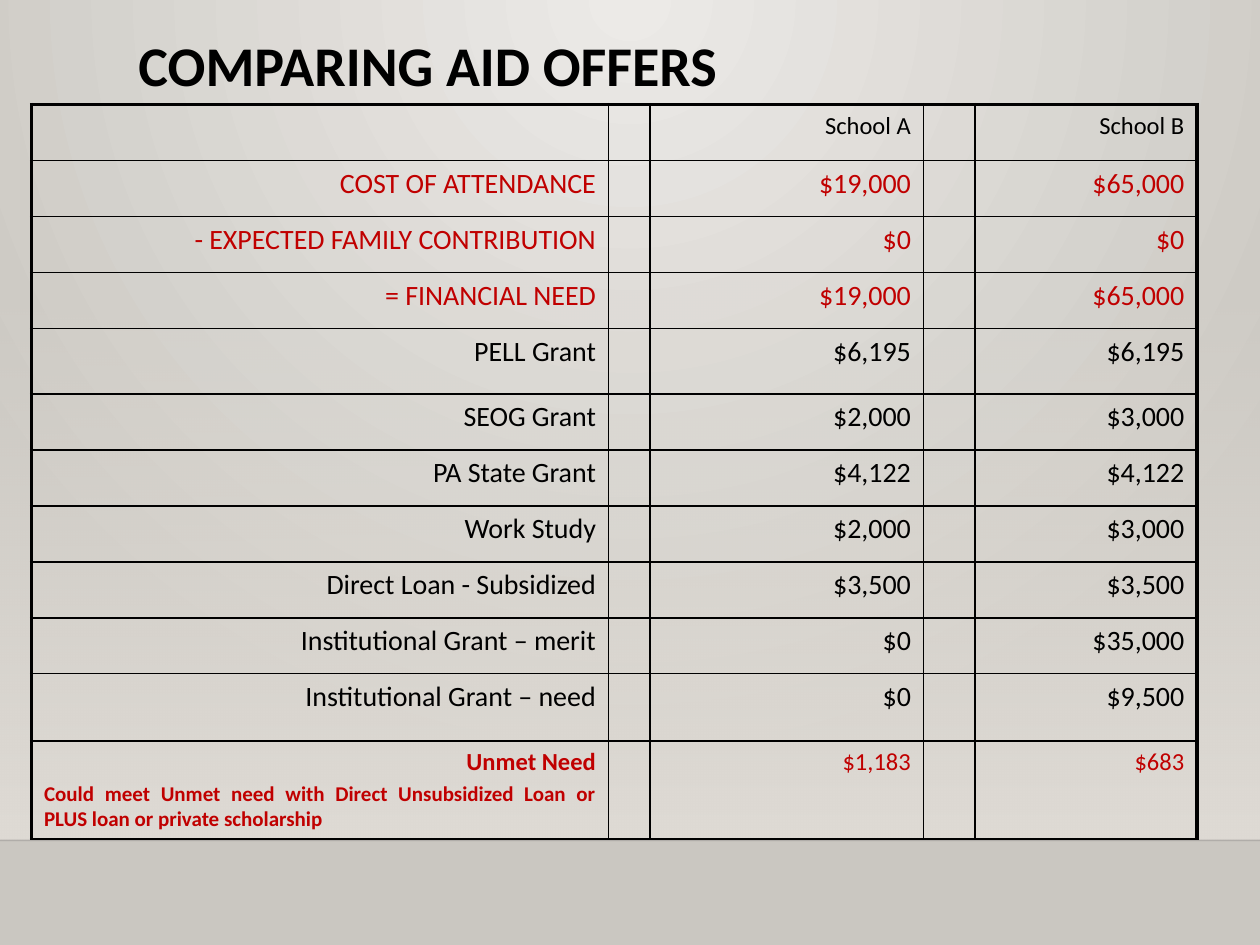
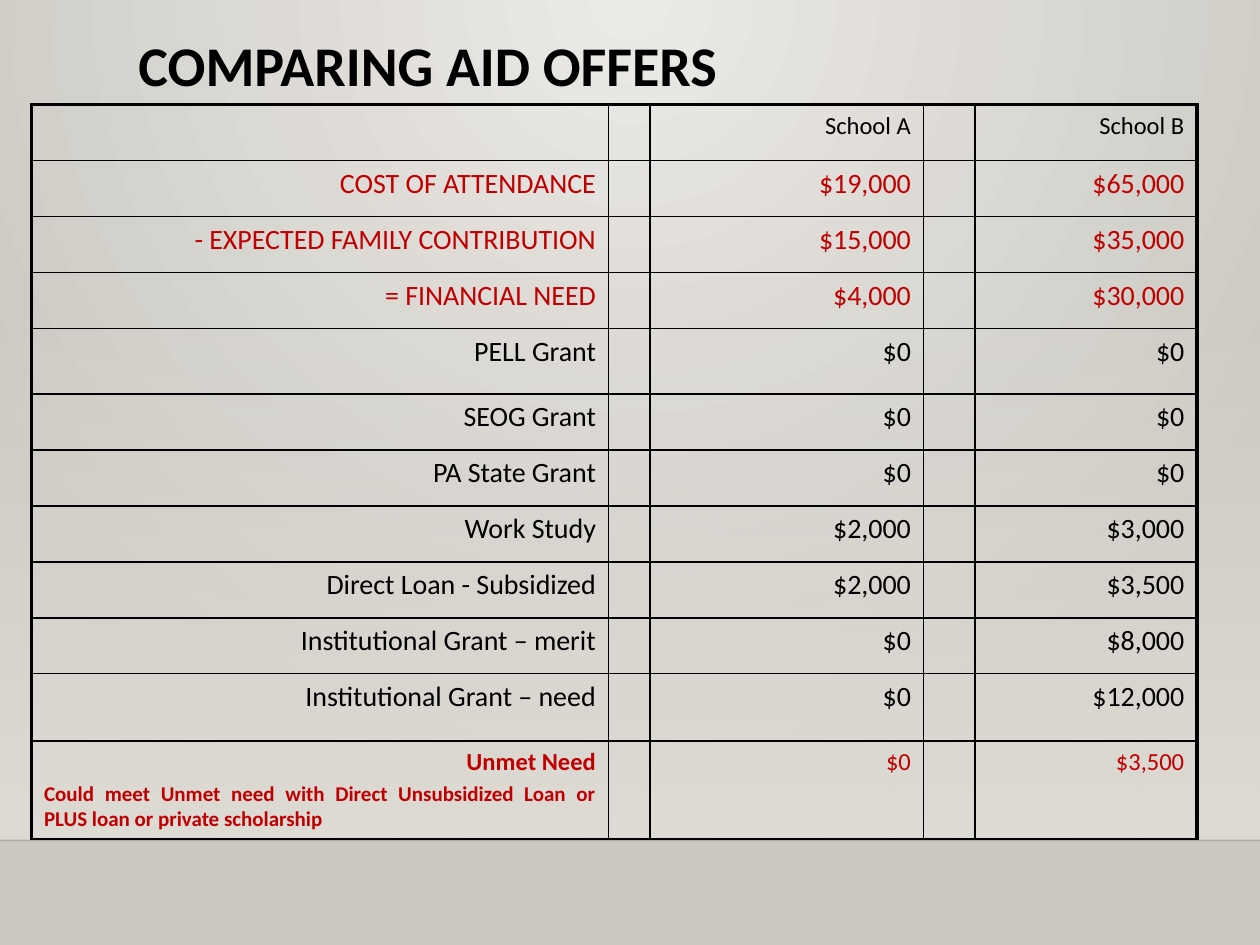
import dataclasses

import lxml.etree
import pptx
import pptx.dml.color
import pptx.enum.shapes
import pptx.enum.text
import pptx.oxml.ns
import pptx.util

ALIGN = pptx.enum.text.PP_ALIGN
qn = pptx.oxml.ns.qn


@dataclasses.dataclass(frozen=True)
class Theme:
    """Colours, font, type sizes and line widths of the deck."""
    font: str = "Calibri"
    ink: str = "000000"
    accent: str = "C00000"
    wall_light: str = "ECEAE7"
    wall_dark: str = "CAC7C1"
    glow: str = "DFDBD5"
    floor_line: str = "000001"
    title_size: float = 32
    body_size: float = 16
    small_size: float = 14
    note_size: float = 12
    thin: float = 1
    thick: float = 2.25


THEME = Theme()
WIDTH, HEIGHT = pptx.util.Inches(10), pptx.util.Inches(7.5)
FLOOR = 6.67 / 7.5
COLUMN_INCHES = (4.58, 0.33, 2.17, 0.41, 1.76)
ROW_POINTS = (32, 32, 32, 32, 37.5, 32, 32, 32, 32, 32, 38.5, 56)
LABEL_COLUMN, SCHOOL_A_COLUMN, SCHOOL_B_COLUMN = 0, 2, 4
FORMULA_LABELS = ("COST OF ATTENDANCE", "- EXPECTED FAMILY CONTRIBUTION", "= FINANCIAL NEED")
AID_LABELS = ("PELL Grant", "SEOG Grant", "PA State Grant", "Work Study",
              "Direct Loan - Subsidized", "Institutional Grant – merit",
              "Institutional Grant – need")
UNMET_LABEL = "Unmet Need"
UNMET_NOTE = ("Could meet Unmet need with Direct Unsubsidized Loan or PLUS loan "
              "or private scholarship")
LABELS = FORMULA_LABELS + AID_LABELS + (UNMET_LABEL,)
OFFERS = (
    (("$19,000", "$0", "$19,000", "$6,195", "$2,000", "$4,122", "$2,000", "$3,500",
      "$0", "$0", "$1,183"),
     ("$65,000", "$0", "$65,000", "$6,195", "$3,000", "$4,122", "$3,000", "$3,500",
      "$35,000", "$9,500", "$683")),
    (("$19,000", "$15,000", "$4,000", "$0", "$0", "$0", "$2,000", "$2,000",
      "$0", "$0", "$0"),
     ("$65,000", "$35,000", "$30,000", "$0", "$0", "$0", "$3,000", "$3,500",
      "$8,000", "$12,000", "$3,500")),
)


def rgb(colour):
    """Turn a hex string into a colour."""
    return pptx.dml.color.RGBColor.from_string(colour)


def share(x, y):
    """Give a point from shares of the slide's width and height."""
    return round(WIDTH * x), round(HEIGHT * y)


def write(frame, text, *, size=THEME.body_size, colour=THEME.ink, bold=False,
          align=ALIGN.RIGHT, line_spacing=None, space_before=None, append=False):
    """Write one formatted paragraph into a text frame."""
    paragraph = frame.add_paragraph() if append else frame.paragraphs[0]
    paragraph.alignment = align
    paragraph.line_spacing = line_spacing
    if space_before is not None:
        paragraph.space_before = pptx.util.Pt(space_before)
    run = paragraph.add_run()
    run.text = text
    run.font.name = THEME.font
    run.font.size = pptx.util.Pt(size)
    run.font.bold = bold
    run.font.color.rgb = rgb(colour)


def set_alpha(colour_element, percent):
    """Set the opacity of a colour element."""
    lxml.etree.SubElement(colour_element, qn("a:alpha"), val=str(percent * 1000))


def set_gradient(fill, start, end):
    """Fill with a gradient of two colours."""
    fill.gradient()
    for stop, colour, position in zip(fill.gradient_stops, (start, end), (0, 1)):
        stop.color.rgb = rgb(colour)
        stop.position = position


def add_wall(slide):
    """Light the background from the middle of its top edge."""
    set_gradient(slide.background.fill, THEME.wall_light, THEME.wall_dark)
    gradient = slide.element.find(".//" + qn("p:bgPr") + "/" + qn("a:gradFill"))
    gradient.remove(gradient.find(qn("a:lin")))
    circle = lxml.etree.SubElement(gradient, qn("a:path"), path="circle")
    lxml.etree.SubElement(circle, qn("a:fillToRect"), l="43000", t="0", r="43000", b="100000")


def add_glow(slide):
    """Add the band that fades in down to the floor."""
    top = 2.2 / 7.5
    shape = slide.shapes.add_shape(pptx.enum.shapes.MSO_SHAPE.RECTANGLE,
                                   *share(0, top), *share(1, FLOOR - top))
    shape.shadow.inherit = False
    shape.line.fill.background()
    set_gradient(shape.fill, THEME.glow, THEME.glow)
    shape.fill.gradient_angle = 270
    set_alpha(shape.element.spPr.find(".//" + qn("a:srgbClr")), 0)


def add_floor_line(slide):
    """Draw the faint line where wall and floor meet."""
    line = slide.shapes.add_connector(pptx.enum.shapes.MSO_CONNECTOR.STRAIGHT,
                                      *share(0, FLOOR), *share(1, FLOOR))
    line.line.width = pptx.util.Pt(THEME.thin)
    line.line.color.rgb = rgb(THEME.floor_line)
    properties = line.element.spPr
    set_alpha(properties.find(".//" + qn("a:srgbClr")), 20)
    lxml.etree.SubElement(properties, qn("a:effectLst"))


def add_title(slide, text):
    """Add the slide title."""
    box = slide.shapes.add_textbox(*share(0.1, 0.25 / 7.5), *share(0.78, 0.1))
    box.text_frame.word_wrap = True
    write(box.text_frame, text, size=THEME.title_size, bold=True,
          align=ALIGN.LEFT, line_spacing=0.9)


def set_borders(cell, **widths):
    """Rule the sides of a cell, given as L, R, T and B in points."""
    properties = cell._tc.get_or_add_tcPr()
    for index, (side, width) in enumerate(widths.items()):
        line = lxml.etree.Element(qn("a:ln" + side), w=str(pptx.util.Pt(width)))
        fill = lxml.etree.SubElement(line, qn("a:solidFill"))
        lxml.etree.SubElement(fill, qn("a:srgbClr"), val=THEME.ink)
        properties.insert(index, line)


def add_grid(slide):
    """Add an empty table with a heavy left, top and right edge."""
    widths = [pptx.util.Inches(width) for width in COLUMN_INCHES]
    heights = [pptx.util.Pt(height) for height in ROW_POINTS]
    frame = slide.shapes.add_table(len(heights), len(widths), *share(0.025, 0.83 / 7.5),
                                   sum(widths), sum(heights))
    table = frame.table
    table.first_row = table.horz_banding = False
    for column, width in zip(table.columns, widths):
        column.width = width
    last = len(widths) - 1
    for row_index, (row, height) in enumerate(zip(table.rows, heights)):
        row.height = height
        for column_index, cell in enumerate(row.cells):
            cell.fill.background()
            set_borders(cell,
                        L=THEME.thick if column_index == 0 else THEME.thin,
                        R=THEME.thick if column_index == last else THEME.thin,
                        T=THEME.thick if row_index == 0 else THEME.thin,
                        B=THEME.thin)
    return table


def add_offer_table(slide, school_a, school_b):
    """Add the table that sets two aid offers side by side."""
    table = add_grid(slide)
    for column, school in ((SCHOOL_A_COLUMN, "School A"), (SCHOOL_B_COLUMN, "School B")):
        write(table.cell(0, column).text_frame, school, size=THEME.small_size)
    columns = (LABEL_COLUMN, SCHOOL_A_COLUMN, SCHOOL_B_COLUMN)
    for row, texts in enumerate(zip(LABELS, school_a, school_b), start=1):
        label = texts[0]
        unmet = label == UNMET_LABEL
        for column, text in zip(columns, texts):
            write(table.cell(row, column).text_frame, text,
                  size=THEME.small_size if unmet else THEME.body_size,
                  colour=THEME.ink if label in AID_LABELS else THEME.accent,
                  bold=unmet and column == LABEL_COLUMN)
    write(table.cell(len(LABELS), LABEL_COLUMN).text_frame, UNMET_NOTE,
          size=THEME.note_size, colour=THEME.accent, bold=True,
          align=ALIGN.JUSTIFY, space_before=0.2 * THEME.note_size, append=True)


def main():
    """Build one comparison slide for each pair of offers."""
    presentation = pptx.Presentation()
    presentation.slide_width, presentation.slide_height = WIDTH, HEIGHT
    for school_a, school_b in OFFERS:
        slide = presentation.slides.add_slide(presentation.slide_layouts[6])
        add_wall(slide)
        add_glow(slide)
        add_floor_line(slide)
        add_title(slide, "COMPARING AID OFFERS")
        add_offer_table(slide, school_a, school_b)
    presentation.save("out.pptx")


if __name__ == "__main__":
    main()
